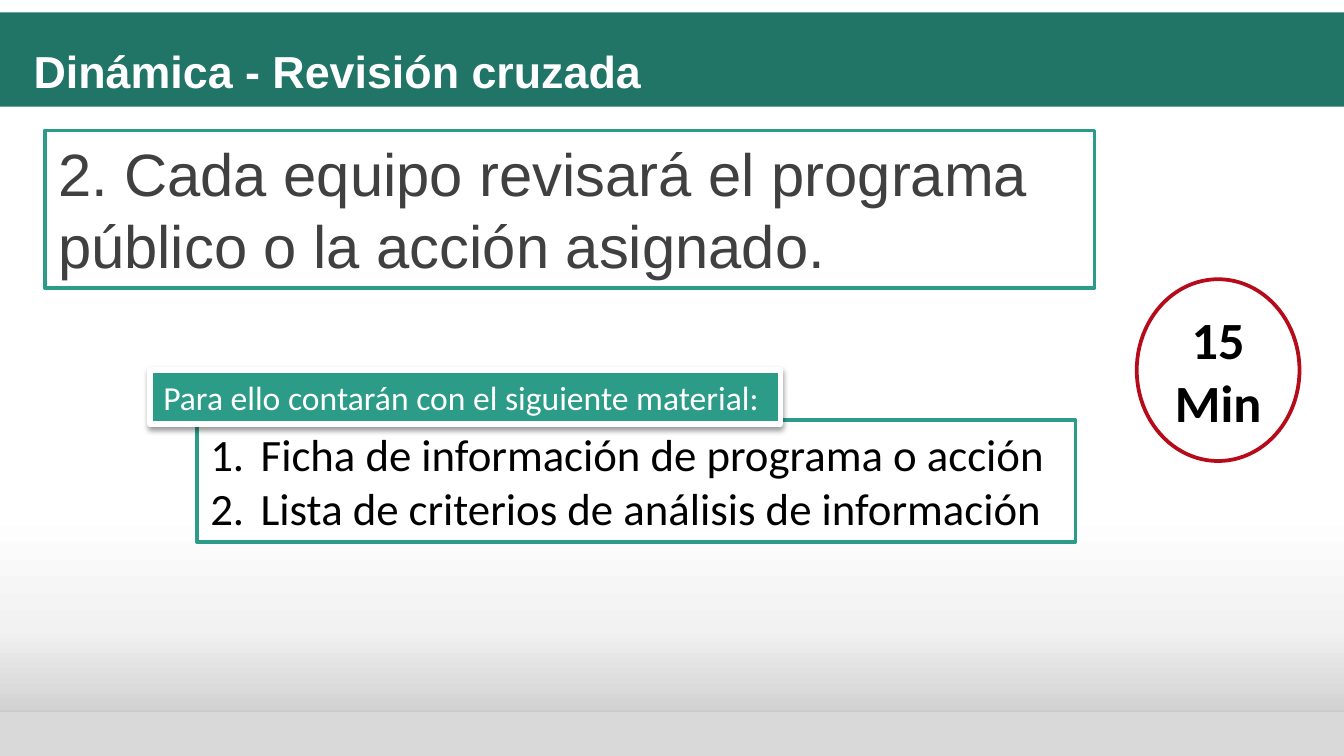
from copy import deepcopy

from lxml import etree
from pptx import Presentation
from pptx.dml.color import RGBColor
from pptx.enum.shapes import MSO_SHAPE
from pptx.enum.text import MSO_ANCHOR, PP_ALIGN
from pptx.oxml.ns import qn
from pptx.util import Pt

RECT, CIRCLE = MSO_SHAPE.RECTANGLE, MSO_SHAPE.FLOWCHART_CONNECTOR
TOP, MIDDLE = MSO_ANCHOR.TOP, MSO_ANCHOR.MIDDLE
LEFT, CENTER = PP_ALIGN.LEFT, PP_ALIGN.CENTER

WHITE = RGBColor(0xFF, 0xFF, 0xFF)
BLACK = RGBColor(0x00, 0x00, 0x00)
DARK_GRAY = RGBColor(0x40, 0x40, 0x40)
MID_GRAY = RGBColor(0xBF, 0xBF, 0xBF)
FOOTER_GRAY = RGBColor(0xD9, 0xD9, 0xD9)
PALE_GRAY = RGBColor(0xF2, 0xF2, 0xF2)
DARK_GREEN = RGBColor(0x21, 0x75, 0x67)
GREEN = RGBColor(0x2C, 0x9C, 0x89)
RED = RGBColor(0xB5, 0x0B, 0x1B)

prs = Presentation()
prs.slide_width, prs.slide_height = Pt(720), Pt(405)
slide = prs.slides.add_slide(prs.slide_layouts[5])


def add_box(preset, bounds, fill, line=None, line_width=2, shadow_alpha=None):
    box = slide.shapes.add_shape(preset, *[Pt(v) for v in bounds])
    box.fill.solid()
    box.fill.fore_color.rgb = fill
    if line is None:
        box.line.fill.background()
    else:
        box.line.color.rgb = line
        box.line.width = Pt(line_width)
    box.shadow.inherit = False
    if shadow_alpha:
        effects = box._element.spPr.find(qn("a:effectLst"))
        shadow = etree.SubElement(effects, qn("a:outerShdw"), blurRad=str(Pt(3.1)),
                                  dist=str(Pt(1.7)), dir="5400000", rotWithShape="0")
        color = etree.SubElement(shadow, qn("a:srgbClr"), val=str(BLACK))
        etree.SubElement(color, qn("a:alpha"), val=str(shadow_alpha * 1000))
    return box


def write_text(box, lines, font_format, align=LEFT, anchor=TOP, numbered=False):
    frame = box.text_frame
    frame.word_wrap = True
    frame.vertical_anchor = anchor
    frame.text = "\n".join(lines)
    for paragraph in frame.paragraphs:
        paragraph.alignment = align
        if numbered:
            properties = paragraph._p.get_or_add_pPr()
            properties.set("marL", str(Pt(27)))
            properties.set("indent", str(-Pt(27)))
            etree.SubElement(properties, qn("a:buFont"), typeface="+mj-lt")
            etree.SubElement(properties, qn("a:buAutoNum"), type="arabicPeriod")
        for run in paragraph.runs:
            for name, value in font_format.items():
                if name == "color":
                    run.font.color.rgb = value
                else:
                    setattr(run.font, name, value)


# Background: fading floor, footer strip and header band
floor = add_box(RECT, (0, 140, 720, 265), WHITE)
floor.fill.gradient()
floor.fill.gradient_angle = 270
stop_list = floor._element.spPr.find(qn("a:gradFill")).find(qn("a:gsLst"))
stop_list.append(deepcopy(stop_list[-1]))
fade = [(0.5, WHITE), (0.74, PALE_GRAY), (1, MID_GRAY)]
for stop, (position, color) in zip(floor.fill.gradient_stops, fade):
    stop.position = position
    stop.color.rgb = color
add_box(RECT, (0, 381.6, 720, 23.4), FOOTER_GRAY, shadow_alpha=35)
add_box(RECT, (0, 6.7, 720, 50.5), DARK_GREEN)

# Title, brought in front of the header band
title = slide.shapes.title
title.left, title.top, title.width, title.height = Pt(10.8), Pt(12.8), Pt(669), Pt(49.7)
write_text(title, ["Dinámica - Revisión cruzada"],
           {"name": "Arial", "size": Pt(24), "bold": True, "color": WHITE}, anchor=MIDDLE)
slide.shapes._spTree.append(title._element)

# Instruction
instruction = add_box(RECT, (24, 70, 562.3, 84.3), WHITE, GREEN)
write_text(instruction, ["2. Cada equipo revisará el programa público o la acción asignado."],
           {"name": "Arial", "size": Pt(32), "color": DARK_GRAY})

# Time allowed
duration = add_box(CIRCLE, (609, 149.6, 87.2, 97.4), WHITE, RED)
write_text(duration, ["15", "Min"],
           {"name": "Calibri", "size": Pt(28), "bold": True, "color": BLACK}, CENTER, MIDDLE)

# Materials and their heading
materials = add_box(RECT, (105.6, 225, 470.6, 65.4), WHITE, GREEN)
write_text(materials, ["Ficha de información de programa o acción",
                       "Lista de criterios de análisis de información"],
           {"name": "Calibri", "size": Pt(24), "color": BLACK}, numbered=True)
heading = add_box(RECT, (80.4, 198.3, 337.7, 29), GREEN, WHITE, 3, shadow_alpha=38)
write_text(heading, ["Para ello contarán con el siguiente material:"],
           {"name": "Calibri", "size": Pt(18), "color": WHITE})

prs.save("out.pptx")
